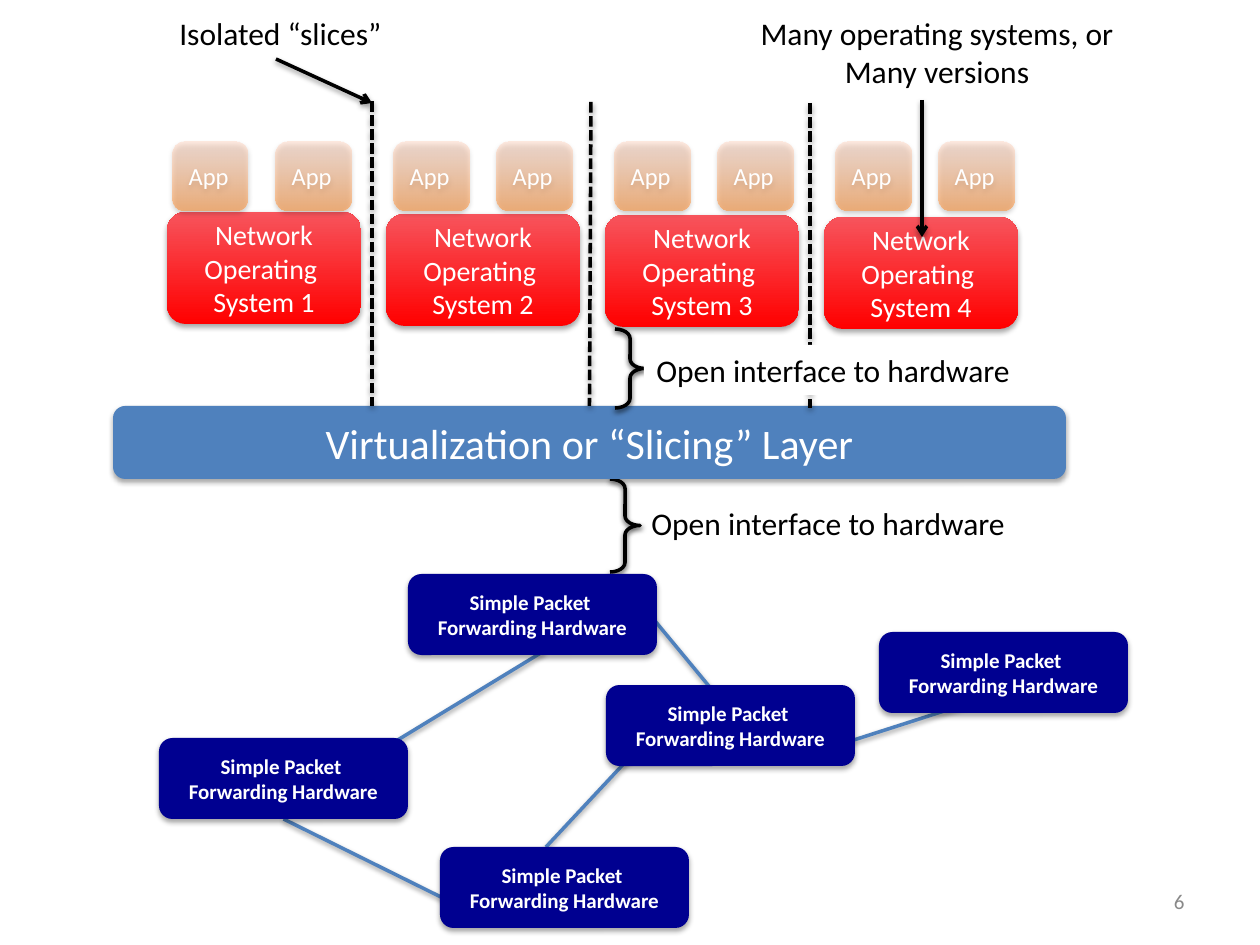
from typing import NamedTuple, Optional

from lxml import etree
from pptx import Presentation
from pptx.dml.color import RGBColor
from pptx.enum.dml import MSO_LINE
from pptx.enum.shapes import MSO_CONNECTOR, MSO_SHAPE
from pptx.enum.text import MSO_ANCHOR, MSO_AUTO_SIZE, PP_ALIGN
from pptx.oxml.ns import qn
from pptx.util import Emu, Pt

ROUND, BRACE, RECT = MSO_SHAPE.ROUNDED_RECTANGLE, MSO_SHAPE.RIGHT_BRACE, MSO_SHAPE.RECTANGLE
STRAIGHT = MSO_CONNECTOR.STRAIGHT
DASH = MSO_LINE.SQUARE_DOT
LEFT, CENTER, RIGHT = PP_ALIGN.LEFT, PP_ALIGN.CENTER, PP_ALIGN.RIGHT
TOP, MIDDLE = MSO_ANCHOR.TOP, MSO_ANCHOR.MIDDLE
FIT = MSO_AUTO_SIZE.SHAPE_TO_FIT_TEXT

FONT = "Calibri"
COLORS = {
    "black": "000000", "white": "FFFFFF", "grey": "898989",
    "blue": "4F81BD", "navy": "000090",
    "red": "FF0000", "rose": "F7545C",
    "orange": "FF953E", "peach": "FFD2BD",
}


class Box(NamedTuple):
    x: int
    y: int
    w: int
    h: int


class Segment(NamedTuple):
    x1: int
    y1: int
    x2: int
    y2: int


class Style(NamedTuple):
    size: int
    color: str = "white"
    bold: bool = False
    align: PP_ALIGN = CENTER
    anchor: MSO_ANCHOR = MIDDLE


class Gradient(NamedTuple):
    bottom: str
    top: str
    alphas: tuple = ()


LABEL = Style(18, "black", align=LEFT, anchor=TOP)
CAPTION = LABEL._replace(align=CENTER)
OS_STYLE, APP_STYLE = Style(16), Style(14, align=LEFT)
OS_FILL = Gradient("red", "rose")
APP_FILL = Gradient("orange", "peach", (60, 45))

LINKS = [
    Segment(355, 766, 544, 651),
    Segment(631, 592, 718, 697),
    Segment(546, 847, 631, 756),
    Segment(284, 818, 459, 906),
    Segment(804, 756, 966, 704),
]
HARDWARE = [(879, 632), (606, 685), (159, 738), (440, 847), (408, 574)]
LEFT_NODE, LEFT_LINK = 2, 3


def px(n: int) -> Emu:
    return Emu(round(n * 914400 / 126))


def rgb(name: str) -> RGBColor:
    return RGBColor.from_string(COLORS[name])


def add_shadow(sp, alpha: int, dist: float) -> None:
    pr = sp._element.spPr
    effects = pr.find(qn("a:effectLst"))
    if effects is None:
        effects = etree.SubElement(pr, qn("a:effectLst"))
    shadow = etree.SubElement(
        effects, qn("a:outerShdw"), blurRad=str(Pt(3.1)), dist=str(Pt(dist)),
        dir="5400000", rotWithShape="0")
    clr = etree.SubElement(shadow, qn("a:srgbClr"), val=COLORS["black"])
    etree.SubElement(clr, qn("a:alpha"), val=str(alpha * 1000))


def write(sp, text: str, style: Style) -> None:
    tf = sp.text_frame
    tf.vertical_anchor = style.anchor
    for i, paragraph in enumerate(text.split("\n")):
        p = tf.paragraphs[0] if i == 0 else tf.add_paragraph()
        p.alignment = style.align
        for j, line in enumerate(paragraph.split("\v")):
            if j:
                p.add_line_break()
            r = p.add_run()
            r.text = line
            r.font.name, r.font.size = FONT, Pt(style.size)
            r.font.bold = style.bold
            r.font.color.rgb = rgb(style.color)


def add_block(s, box: Box, text: str, style: Style, fill: str = "",
              gradient: Optional[Gradient] = None):
    sp = s.shapes.add_shape(ROUND, *map(px, box))
    sp.shadow.inherit = False
    sp.line.fill.background()
    if gradient:
        sp.fill.gradient()
        sp.fill.gradient_angle = 90
        for stop, name, pos in zip(sp.fill.gradient_stops, gradient[:2], (0, 1)):
            stop.color.rgb = rgb(name)
            stop.position = pos
        for clr, alpha in zip(sp._element.spPr.iter(qn("a:srgbClr")), gradient.alphas):
            etree.SubElement(clr, qn("a:alpha"), val=str(alpha * 1000))
    else:
        sp.fill.solid()
        sp.fill.fore_color.rgb = rgb(fill)
    add_shadow(sp, 35, 1.8)
    sp.text_frame.word_wrap = True
    write(sp, text, style)
    return sp


def add_label(s, box: Box, text: str, style: Style) -> None:
    sp = s.shapes.add_textbox(*map(px, box))
    sp.text_frame.word_wrap = False
    sp.text_frame.auto_size = FIT
    write(sp, text, style)


def add_brace(s, box: Box) -> None:
    sp = s.shapes.add_shape(BRACE, *map(px, box))
    sp.shadow.inherit = False
    sp.adjustments[0], sp.adjustments[1] = 0.315, 0.5
    sp.fill.background()
    sp.line.color.rgb = rgb("black")
    sp.line.width = Pt(2)
    add_shadow(sp, 69, 1.6)


def add_line(s, seg: Segment, color: str, dashed: bool = False, arrow: bool = False):
    line = s.shapes.add_connector(STRAIGHT, *map(px, seg))
    line.line.color.rgb = rgb(color)
    line.line.width = Pt(2)
    if dashed:
        line.line.dash_style = DASH
    if arrow:
        etree.SubElement(line._element.spPr.find(qn("a:ln")), qn("a:tailEnd"), type="arrow")
    add_shadow(line, 38, 1.6)
    return line


def main() -> None:
    prs = Presentation()
    prs.slide_width, prs.slide_height = px(1260), px(945)
    s = prs.slides.add_slide(prs.slide_layouts[6])

    links = [add_line(s, seg, "blue") for seg in LINKS]

    add_brace(s, Box(610, 479, 30, 93))
    add_label(s, Box(639, 498, 383, 50), "Open interface to hardware", LABEL)
    layer = add_block(s, Box(113, 406, 953, 73), "Virtualization or “Slicing” Layer",
                      Style(24), "blue")

    for i in range(4):
        add_block(s, Box(167 + 219 * i, 212 + round(1.6 * i), 194, 112),
                  f"Network Operating \vSystem {i + 1}", OS_STYLE, gradient=OS_FILL)
    for i in range(4):
        for j in range(2):
            add_block(s, Box(173 + 221 * i + 103 * j, 142, 75, 68), "App",
                      APP_STYLE, gradient=APP_FILL)

    add_label(s, Box(746, 8, 382, 89), "Many operating systems, or\nMany versions", CAPTION)
    add_line(s, Segment(922, 100, 922, 237), "black", arrow=True)

    slices = [add_line(s, Segment(372 + 219 * i, 101 + i, 372 + 219 * i, 406 + i),
                       "black", dashed=True) for i in range(3)]
    slices[1].end_connect(layer, 0)

    add_brace(s, Box(615, 329, 30, 79))
    sp = s.shapes.add_shape(RECT, *map(px, Box(644, 345, 382, 50)))
    sp.shadow.inherit = False
    sp.fill.solid()
    sp.fill.fore_color.rgb = rgb("white")
    sp.line.fill.background()
    sp.text_frame.word_wrap = True
    write(sp, "Open interface to hardware", LABEL)

    add_label(s, Box(166, 8, 229, 50), "Isolated “slices”", CAPTION)
    add_line(s, Segment(276, 59, 372, 103), "black", arrow=True)

    nodes = [add_block(s, Box(x, y, 249, 81), "Simple Packet \vForwarding Hardware",
                       Style(12, bold=True), "navy") for x, y in HARDWARE]
    links[LEFT_LINK].begin_connect(nodes[LEFT_NODE], 2)

    number = s.shapes.add_textbox(*map(px, Box(903, 876, 294, 50)))
    number.text_frame.word_wrap = True
    write(number, "6", Style(12, "grey", align=RIGHT))

    prs.save("out.pptx")


if __name__ == "__main__":
    main()
